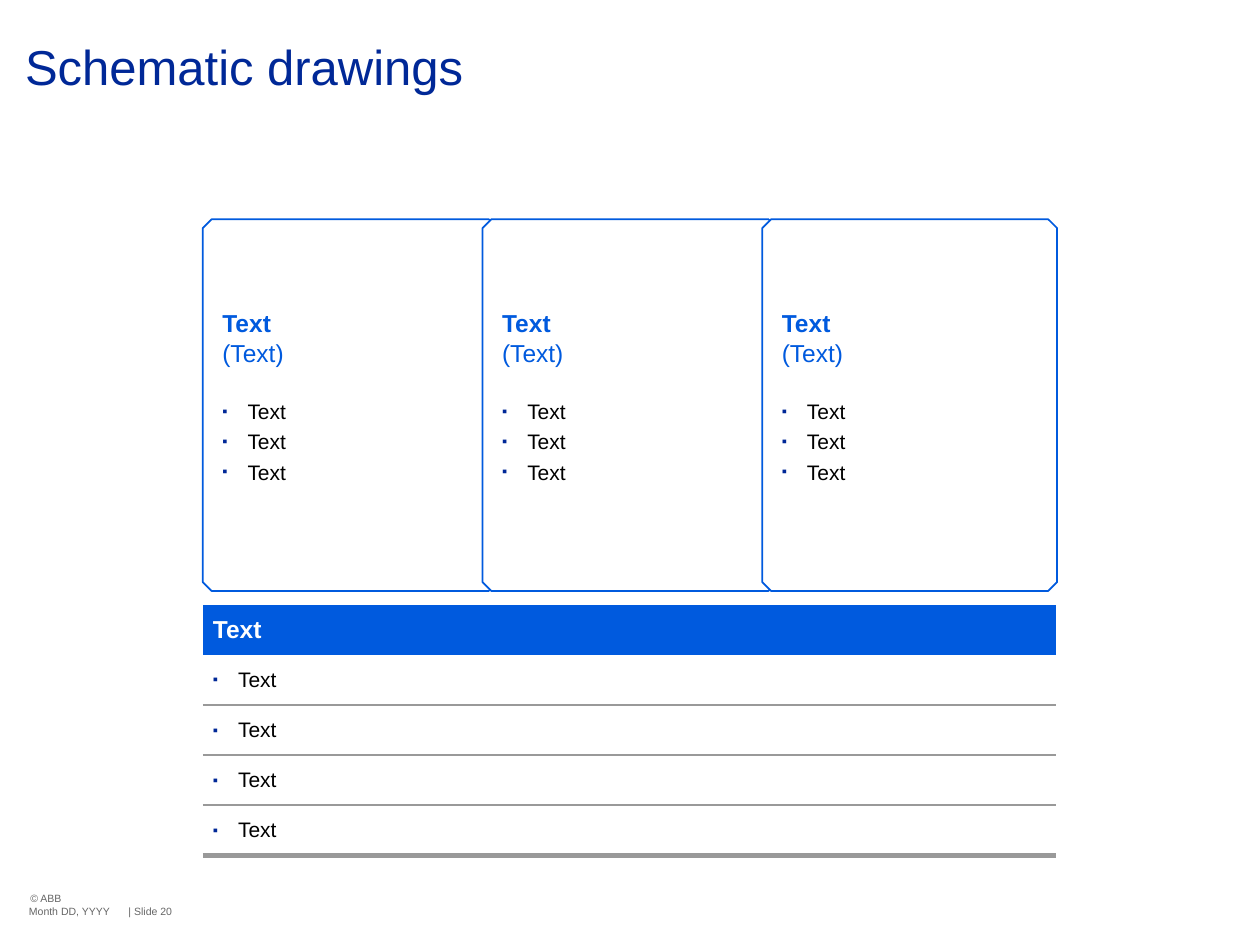
from lxml.etree import SubElement
from pptx import Presentation
from pptx.dml.color import RGBColor
from pptx.enum.shapes import MSO_SHAPE
from pptx.enum.text import MSO_ANCHOR, PP_ALIGN
from pptx.oxml import parse_xml
from pptx.oxml.ns import nsdecls, qn
from pptx.util import Inches, Pt

COLORS = {
    "white": "FFFFFF",
    "black": "000000",
    "navy": "002897",
    "blue": "005ADE",
    "rule": "999999",
    "footer": "666666",
}
FONT = "Arial"
NO_TABLE_STYLE = "{2D5ABB26-0587-4C30-8999-92F81FD0307C}"


def rgb(name):
    return RGBColor.from_string(COLORS[name])


def add_run(p, text, size=12, color="black", bold=False):
    r = p.add_run()
    r.text = text
    r.font.name = FONT
    r.font.size = Pt(size)
    r.font.bold = bold
    r.font.color.rgb = rgb(color)


def make_bullet(p):
    pPr = p._p.get_or_add_pPr()
    pPr.set("marL", str(Inches(0.2)))
    pPr.set("indent", str(-Inches(0.2)))
    color = SubElement(pPr, qn("a:buClr"))
    SubElement(color, qn("a:srgbClr"), val=COLORS["navy"])
    SubElement(pPr, qn("a:buSzPct"), val="70000")
    SubElement(pPr, qn("a:buFont"), typeface=FONT)
    SubElement(pPr, qn("a:buChar"), char="▪")


def set_margins(target, left, top, right, bottom):
    target.margin_left, target.margin_top = Inches(left), Inches(top)
    target.margin_right, target.margin_bottom = Inches(right), Inches(bottom)


class SlideBuilder:
    def __init__(self, prs):
        self.slide = prs.slides.add_slide(prs.slide_layouts[6])

    def text(self, text, box, margins=(0, 0, 0, 0), wrap=True,
             anchor=MSO_ANCHOR.TOP, line_spacing=None, **style):
        sp = self.slide.shapes.add_textbox(*map(Inches, box))
        tf = sp.text_frame
        tf.word_wrap = wrap
        tf.vertical_anchor = anchor
        set_margins(tf, *margins)
        p = tf.paragraphs[0]
        p.line_spacing = line_spacing
        add_run(p, text, **style)

    def panel(self, box, heading, subheading, bullets):
        sp = self.slide.shapes.add_shape(MSO_SHAPE.SNIP_2_DIAG_RECTANGLE,
                                         *map(Inches, box))
        sp.adjustments[0], sp.adjustments[1] = 0.03, 0.03
        sp.shadow.inherit = False
        sp.fill.solid()
        sp.fill.fore_color.rgb = rgb("white")
        sp.line.color.rgb = rgb("blue")
        sp.line.width = Pt(1)
        tf = sp.text_frame
        tf.word_wrap = True
        tf.vertical_anchor = MSO_ANCHOR.TOP
        set_margins(tf, 0.12, 0.67, 0.28, 0.12)
        p = tf.paragraphs[0]
        p.alignment = PP_ALIGN.LEFT
        add_run(p, heading, size=14, color="blue", bold=True)
        p.add_line_break()
        add_run(p, subheading, size=14, color="blue")
        for i, bullet in enumerate(bullets):
            p = tf.add_paragraph()
            p.alignment = PP_ALIGN.LEFT
            p.space_before = Pt(3 if i else 18)
            make_bullet(p)
            add_run(p, bullet)

    def bottom_border(self, cell, width):
        line = parse_xml(
            f'<a:lnB {nsdecls("a")} w="{Pt(width)}"><a:solidFill>'
            f'<a:srgbClr val="{COLORS["rule"]}"/></a:solidFill></a:lnB>')
        cell._tc.get_or_add_tcPr().insert(0, line)

    def table(self, box, header, rows):
        frame = self.slide.shapes.add_table(len(rows) + 1, 1,
                                            *map(Inches, box))
        table = frame.table
        table.first_row = table.horz_banding = False
        table._tbl.tblPr.find(qn("a:tableStyleId")).text = NO_TABLE_STYLE
        for i, text in enumerate([header] + rows):
            cell = table.cell(i, 0)
            cell.vertical_anchor = MSO_ANCHOR.MIDDLE
            set_margins(cell, 0.08, 0.08, 0.08, 0.08)
            cell.fill.solid()
            cell.fill.fore_color.rgb = rgb("white" if i else "blue")
            p = cell.text_frame.paragraphs[0]
            if i:
                make_bullet(p)
                add_run(p, text)
                self.bottom_border(cell, 3 if i == len(rows) else 1)
            else:
                add_run(p, text, size=14, color="white", bold=True)


def main():
    prs = Presentation()
    prs.slide_width, prs.slide_height = Inches(10), Inches(7.5)
    s = SlideBuilder(prs)

    # Title
    s.text("Schematic drawings", (0, 0, 10, 1.74), (0.2, 0.34, 0.24, 0),
           line_spacing=0.9, size=28, color="navy")

    # Table below the panels
    s.table((1.61, 4.8, 6.77, 1.99), "Text", ["Text"] * 4)

    # Overlapping panels, left to right
    for i in range(3):
        s.panel((1.61 + 2.22 * i, 1.74, 2.34, 2.95),
                "Text", "(Text)", ["Text"] * 3)

    # Footer
    footer = {"size": 6, "color": "footer"}
    s.text("© ABB", (0.24, 7.08, 1.22, 0.1), wrap=False, **footer)
    s.text("Month DD, YYYY", (0.23, 7.18, 0.8, 0.11), wrap=False, **footer)
    s.text("| Slide 20", (1.02, 7.18, 0.53, 0.1),
           anchor=MSO_ANCHOR.MIDDLE, **footer)

    prs.save("out.pptx")


if __name__ == "__main__":
    main()
